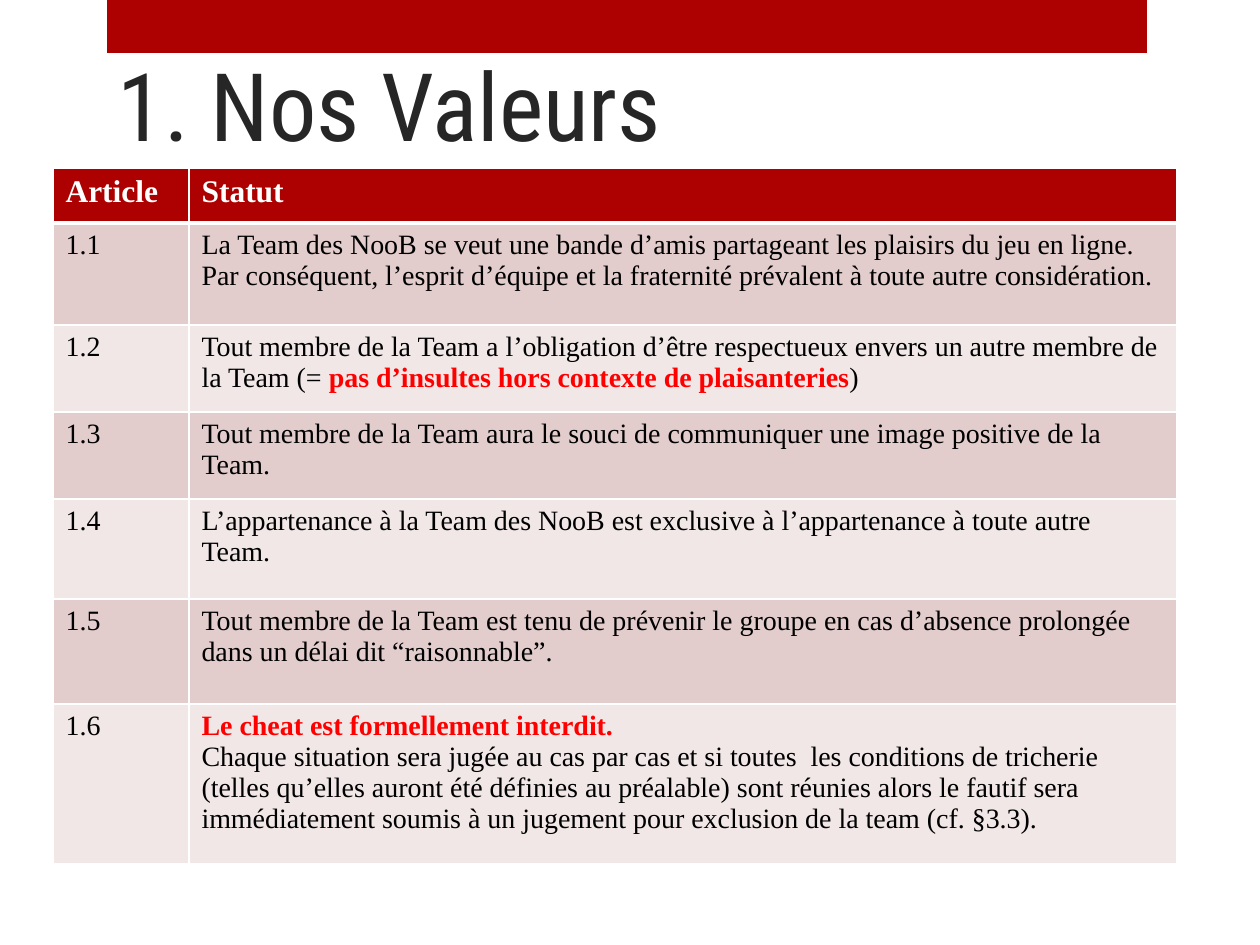
from lxml.etree import SubElement
from pptx import Presentation
from pptx.dml.color import RGBColor
from pptx.enum.shapes import MSO_SHAPE
from pptx.enum.text import MSO_ANCHOR, PP_ALIGN
from pptx.oxml.ns import qn
from pptx.util import Pt

PX = 914400 / 126
COLORS = {"red": "AD0101", "title": "262626", "white": "FFFFFF", "black": "000000",
          "alert": "FF0000", "odd": "E3CCCC", "even": "F1E7E7"}
COLUMNS = [136, 988]
ROW_HEIGHTS = [55, 102, 87, 87, 100, 105, 160]
HEADER = ("Article", "Statut")
RULES = [
    "La Team des NooB se veut une bande d’amis partageant les plaisirs du jeu en ligne. "
    "Par conséquent, l’esprit d’équipe et la fraternité prévalent à toute autre considération.",
    "Tout membre de la Team a l’obligation d’être respectueux envers un autre membre de la Team "
    "(= *pas d’insultes hors contexte de plaisanteries*)",
    "Tout membre de la Team aura le souci de communiquer une image positive de la Team.",
    "L’appartenance à la Team des NooB est exclusive à l’appartenance à toute autre Team.",
    "Tout membre de la Team est tenu de prévenir le groupe en cas d’absence prolongée "
    "dans un délai dit “raisonnable”.",
    "*Le cheat est formellement interdit.*\n"
    "Chaque situation sera jugée au cas par cas et si toutes  les conditions de tricherie "
    "(telles qu’elles auront été définies au préalable) sont réunies alors le fautif sera "
    "immédiatement soumis à un jugement pour exclusion de la team (cf. §3.3).",
]


def px(n):
    """Convert pixels to EMU."""
    return round(n * PX)


def rgb(name):
    """Look up a named colour."""
    return RGBColor.from_string(COLORS[name])


def set_font(r, size, color, bold=False, name="Times New Roman"):
    """Format one run."""
    r.font.name, r.font.size, r.font.bold = name, Pt(size), bold
    r.font.color.rgb = rgb(color)


def add_bar(s, x, y, w, h):
    """Draw the red band at the top."""
    sp = s.shapes.add_shape(MSO_SHAPE.RECTANGLE, px(x), px(y), px(w), px(h))
    sp.fill.solid()
    sp.fill.fore_color.rgb = rgb("red")
    sp.line.fill.background()
    sp.shadow.inherit = False


def add_title(s, x, y, w, h, text):
    """Place and format the title placeholder."""
    sp = s.shapes.title
    sp.left, sp.top, sp.width, sp.height = px(x), px(y), px(w), px(h)
    tf = sp.text_frame
    tf.text = text
    tf.vertical_anchor = MSO_ANCHOR.BOTTOM
    p = tf.paragraphs[0]
    p.alignment = PP_ALIGN.LEFT
    p.line_spacing = 1.0
    set_font(p.runs[0], 54, "title", name="Roboto Condensed")


def write_rule(p, text):
    """Write rule text, with starred parts in bold red and newlines as breaks."""
    for i, part in enumerate(text.split("*")):
        for j, line in enumerate(part.split("\n")):
            if j:
                p.add_line_break()
                SubElement(p._p[-1], qn("a:rPr"), sz="1600")
            if line:
                r = p.add_run()
                r.text = line
                set_font(r, 16, "alert" if i % 2 else "black", bool(i % 2))


def style_cell(cell, fill, bottom):
    """Give a cell white borders and a solid fill."""
    tcPr = cell._tc.get_or_add_tcPr()
    for side, width in (("L", 1), ("R", 1), ("T", 1), ("B", bottom)):
        ln = SubElement(tcPr, qn(f"a:ln{side}"), w=str(Pt(width)))
        SubElement(SubElement(ln, qn("a:solidFill")), qn("a:srgbClr"), val=COLORS["white"])
    cell.fill.solid()
    cell.fill.fore_color.rgb = rgb(fill)


def add_rules(s, x, y, w, h):
    """Build the table of articles."""
    table = s.shapes.add_table(len(ROW_HEIGHTS), len(COLUMNS), px(x), px(y), px(w), px(h)).table
    for col, width in zip(table.columns, COLUMNS):
        col.width = px(width)
    for row, height in zip(table.rows, ROW_HEIGHTS):
        row.height = px(height)
    for cell, text in zip(table.rows[0].cells, HEADER):
        cell.text = text
        set_font(cell.text_frame.paragraphs[0].runs[0], 18, "white", True)
        style_cell(cell, "red", 3)
    for n, rule in enumerate(RULES, 1):
        for cell, text in zip(table.rows[n].cells, (f"1.{n}", rule)):
            write_rule(cell.text_frame.paragraphs[0], text)
            style_cell(cell, "odd" if n % 2 else "even", 1)


def main():
    """Build and save the slide."""
    prs = Presentation()
    prs.slide_width, prs.slide_height = px(1260), px(945)
    s = prs.slides.add_slide(prs.slide_layouts[5])
    add_bar(s, 107, 0, 1040, 53)
    add_title(s, 105, -53, 935, 220, "1. Nos Valeurs")
    add_rules(s, 53, 168, sum(COLUMNS), sum(ROW_HEIGHTS))
    prs.save("out.pptx")


if __name__ == "__main__":
    main()
